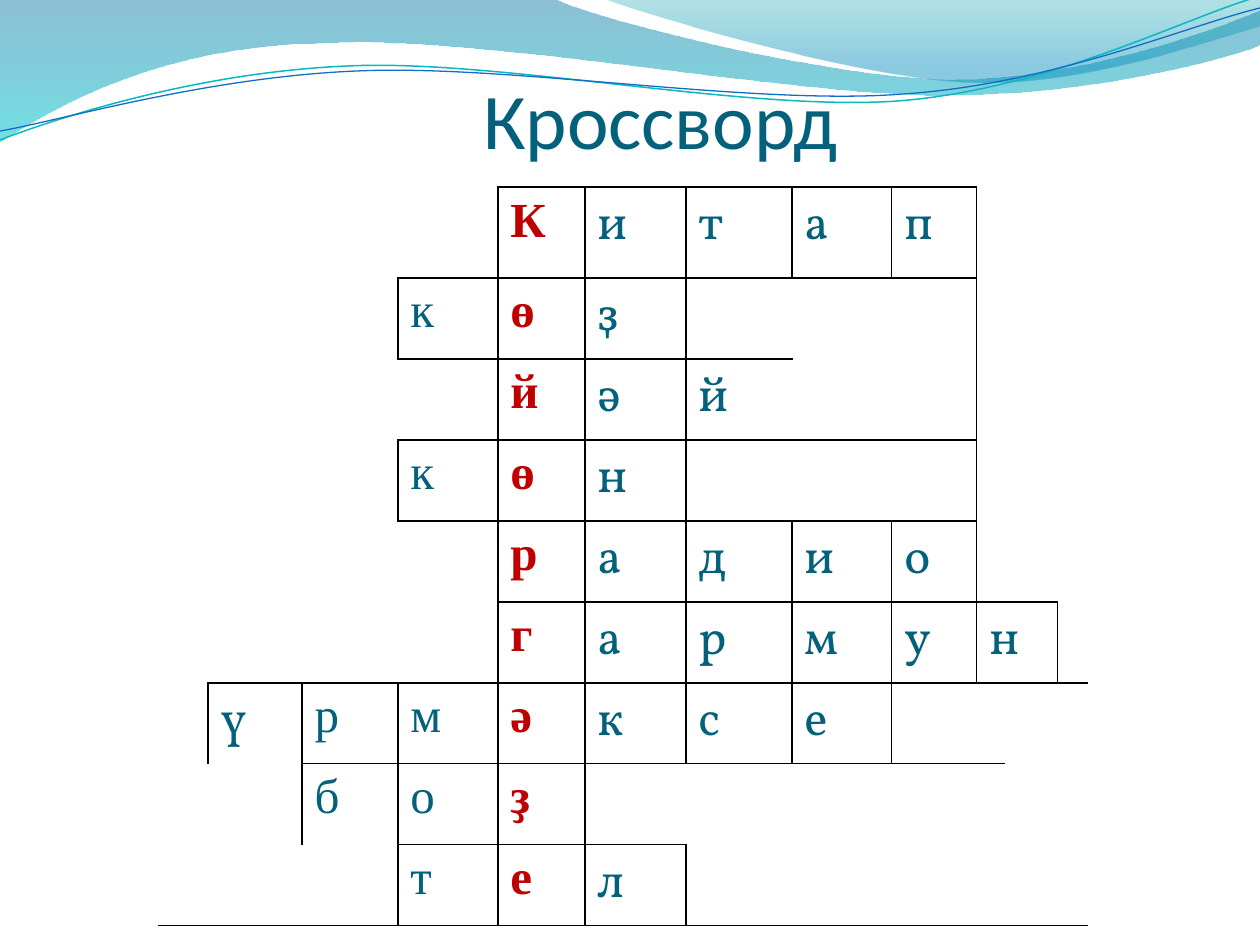
from dataclasses import dataclass
from math import cos, radians, sin

from lxml.etree import SubElement
from pptx import Presentation
from pptx.dml.color import RGBColor
from pptx.enum.text import MSO_ANCHOR, PP_ALIGN
from pptx.oxml.ns import qn
from pptx.util import Emu, Pt

PX_PER_INCH = 126


@dataclass(frozen=True)
class Theme:
    text: str = "04617B"
    key_letter: str = "C00000"
    border: str = "000000"
    teal_line: str = "0AB8BF"
    blue_line: str = "0F6FC6"
    # Gradient stops: position, colour, opacity, all in percent.
    wide_wave: tuple = ((0, "0074A1", 45), (100, "00C6CF", 55))
    right_wave: tuple = ((0, "00A1A9", 30), (80, "008BBF", 45))
    title_font: str = "Calibri"
    key_font: str = "Times New Roman"
    letter_font: str = "Vollkorn"
    title_size: int = 45
    letter_size: int = 28


THEME = Theme()

# Each step lists its points: one for a line, three for a cubic curve.
WIDE_WAVE = [[(0, 0)], [(554, -1)], [(600, 21), (837, 79), (955, 79)],
             [(1075, 79), (1207, 33), (1260, 11)], [(1261, 45)],
             [(1239, 55), (1096, 96), (940, 95)], [(784, 95), (481, 35), (324, 43)],
             [(163, 45), (58, 105), (-1, 142)], [(0, 0)]]
RIGHT_WAVE = [[(604, -1)], [(641, 14), (859, 78), (969, 82)],
              [(1079, 87), (1211, 40), (1260, 26)], [(1260, 0)], [(604, -1)]]
TEAL_CURVE = [[(0, 140)], [(60, 117), (199, 72), (349, 66)],
              [(498, 59), (747, 112), (898, 101)], [(1050, 89), (1182, 19), (1257, -3)]]
BLUE_CURVE = [[(0, 131)], [(59, 121), (207, 77), (357, 71)],
              [(508, 64), (753, 106), (903, 94)], [(1053, 84), (1186, 26), (1260, 8)]]
CURVE_TILT = -2.7

COLUMN_WIDTHS = [50, 94, 96, 100, 87, 101, 106, 100, 85, 28, 53, 30]
ROW_HEIGHTS = [91] + [81] * 8
KEY_COLUMN = 4
KEY_FONT_COLUMNS = (2, 3, KEY_COLUMN)
# First column and word of every row.
WORDS = [(4, "Китап"), (3, "көҙ"), (4, "йәй"), (3, "көн"), (4, "радио"),
         (4, "гармун"), (1, "үрмәксе"), (2, "боҙ"), (3, "тел")]
WIDE_LETTER = (5, 9)
# Row, column, rows spanned, columns spanned, visible edges.
BLANKS = [
    (0, 0, 1, 4, "R"), (0, 9, 5, 3, "LB"),
    (1, 0, 1, 3, "R"), (1, 6, 1, 1, "LTB"), (1, 7, 2, 2, "T"),
    (2, 0, 1, 2, ""), (2, 2, 2, 1, ""), (2, 3, 1, 1, "TRB"),
    (3, 0, 1, 2, ""), (3, 6, 1, 3, "LTB"),
    (4, 0, 1, 3, ""), (4, 3, 2, 1, "TRB"),
    (5, 0, 1, 3, ""), (5, 11, 1, 1, "L"),
    (6, 0, 1, 1, "R"), (6, 8, 1, 4, "LT"),
    (7, 0, 1, 2, "R"), (7, 5, 1, 5, "LTB"), (7, 10, 2, 2, "B"),
    (8, 0, 1, 3, "RB"), (8, 6, 1, 4, "LB"),
]
NO_TABLE_STYLE = "{2D5ABB26-0587-4C30-8999-92F81FD0307C}"


def px(length):
    return Emu(round(length * 914400 / PX_PER_INCH))


def turn(steps, degrees, center=(629, 72)):
    angle = radians(degrees)
    cx, cy = center
    return [[(cx + (x - cx) * cos(angle) - (y - cy) * sin(angle),
              cy + (x - cx) * sin(angle) + (y - cy) * cos(angle))
             for x, y in step] for step in steps]


def add_outline(page, steps, close):
    """Build the outline from its end points, then bend the curved steps."""
    ends = [(px(x), px(y)) for x, y in (step[-1] for step in steps)]
    builder = page.shapes.build_freeform(*ends[0], scale=1.0)
    builder.add_line_segments(ends[1:], close=close)
    shape = builder.convert_to_shape()
    shape.shadow.inherit = False
    segments = list(shape._element.iter(qn("a:lnTo")))
    for segment, step in zip(segments, steps[1:]):
        if len(step) == 3:
            segment.tag = qn("a:cubicBezTo")
            for index, (x, y) in enumerate(step[:2]):
                point = segment.makeelement(qn("a:pt"), {
                    "x": str(px(x) - shape.left), "y": str(px(y) - shape.top)})
                segment.insert(index, point)
    return shape


def add_wave(page, steps, stops):
    wave = add_outline(page, steps, close=True)
    wave.line.fill.background()
    wave.fill.gradient()
    gradient = wave._element.spPr.find(qn("a:gradFill"))
    for child in list(gradient):
        gradient.remove(child)
    stop_list = SubElement(gradient, qn("a:gsLst"))
    for position, color, opacity in stops:
        stop = SubElement(stop_list, qn("a:gs"), pos=str(position * 1000))
        paint = SubElement(stop, qn("a:srgbClr"), val=color)
        SubElement(paint, qn("a:alpha"), val=str(opacity * 1000))
    SubElement(gradient, qn("a:lin"), ang="5400000", scaled="0")


def add_curve(page, steps, color, width):
    """Draw the line level, then tilt it as a shape."""
    curve = add_outline(page, turn(steps, -CURVE_TILT), close=False)
    curve.rotation = CURVE_TILT
    curve.fill.background()
    curve.line.color.rgb = RGBColor.from_string(color)
    curve.line.width = Pt(width)


def add_span(para, text, font, size, color, bold=False):
    span = para.add_run()
    span.text = text
    span.font.name = font
    span.font.size = Pt(size)
    span.font.bold = bold
    span.font.color.rgb = RGBColor.from_string(color)


def add_title(page, text):
    box = page.shapes.add_textbox(px(114), px(97), px(1093), px(68))
    frame = box.text_frame
    frame.word_wrap = True
    frame.vertical_anchor = MSO_ANCHOR.BOTTOM
    frame.margin_left = frame.margin_right = frame.margin_bottom = 0
    para = frame.paragraphs[0]
    para.alignment = PP_ALIGN.CENTER
    add_span(para, text, THEME.title_font, THEME.title_size, THEME.text)


def style_cell(cell, edges):
    """Show the named edges, hide the others and clear the fill."""
    properties = cell._tc.get_or_add_tcPr()
    for edge in "LRTB":
        line = SubElement(properties, qn(f"a:ln{edge}"), w=str(Pt(1)))
        if edge in edges:
            fill = SubElement(line, qn("a:solidFill"))
            SubElement(fill, qn("a:srgbClr"), val=THEME.border)
        else:
            SubElement(line, qn("a:noFill"))
    cell.fill.background()


def add_crossword(page):
    frame = page.shapes.add_table(len(ROW_HEIGHTS), len(COLUMN_WIDTHS), px(158),
                                  px(187), px(sum(COLUMN_WIDTHS)), px(sum(ROW_HEIGHTS)))
    table = frame.table
    table.first_row = table.horz_banding = False
    table._tbl.tblPr.find(qn("a:tableStyleId")).text = NO_TABLE_STYLE
    for column, width in zip(table.columns, COLUMN_WIDTHS):
        column.width = px(width)
    for row, height in zip(table.rows, ROW_HEIGHTS):
        row.height = px(height)

    for row, column, tall, wide, edges in BLANKS:
        cell = table.cell(row, column)
        if tall * wide > 1:
            cell.merge(table.cell(row + tall - 1, column + wide - 1))
        style_cell(cell, edges)

    row, column = WIDE_LETTER
    table.cell(row, column).merge(table.cell(row, column + 1))
    for row, (first, word) in enumerate(WORDS):
        for column, letter in enumerate(word, first):
            cell = table.cell(row, column)
            is_key = column == KEY_COLUMN
            add_span(cell.text_frame.paragraphs[0], letter,
                     THEME.key_font if column in KEY_FONT_COLUMNS else THEME.letter_font,
                     THEME.letter_size,
                     THEME.key_letter if is_key else THEME.text, is_key)
            style_cell(cell, "LRTB")


def main():
    deck = Presentation()
    deck.slide_width, deck.slide_height = px(1260), px(945)
    page = deck.slides.add_slide(deck.slide_layouts[6])
    add_wave(page, WIDE_WAVE, THEME.wide_wave)
    add_wave(page, RIGHT_WAVE, THEME.right_wave)
    add_curve(page, TEAL_CURVE, THEME.teal_line, 0.85)
    add_curve(page, BLUE_CURVE, THEME.blue_line, 0.75)
    add_title(page, "Кроссворд")
    add_crossword(page)
    deck.save("out.pptx")


if __name__ == "__main__":
    main()
